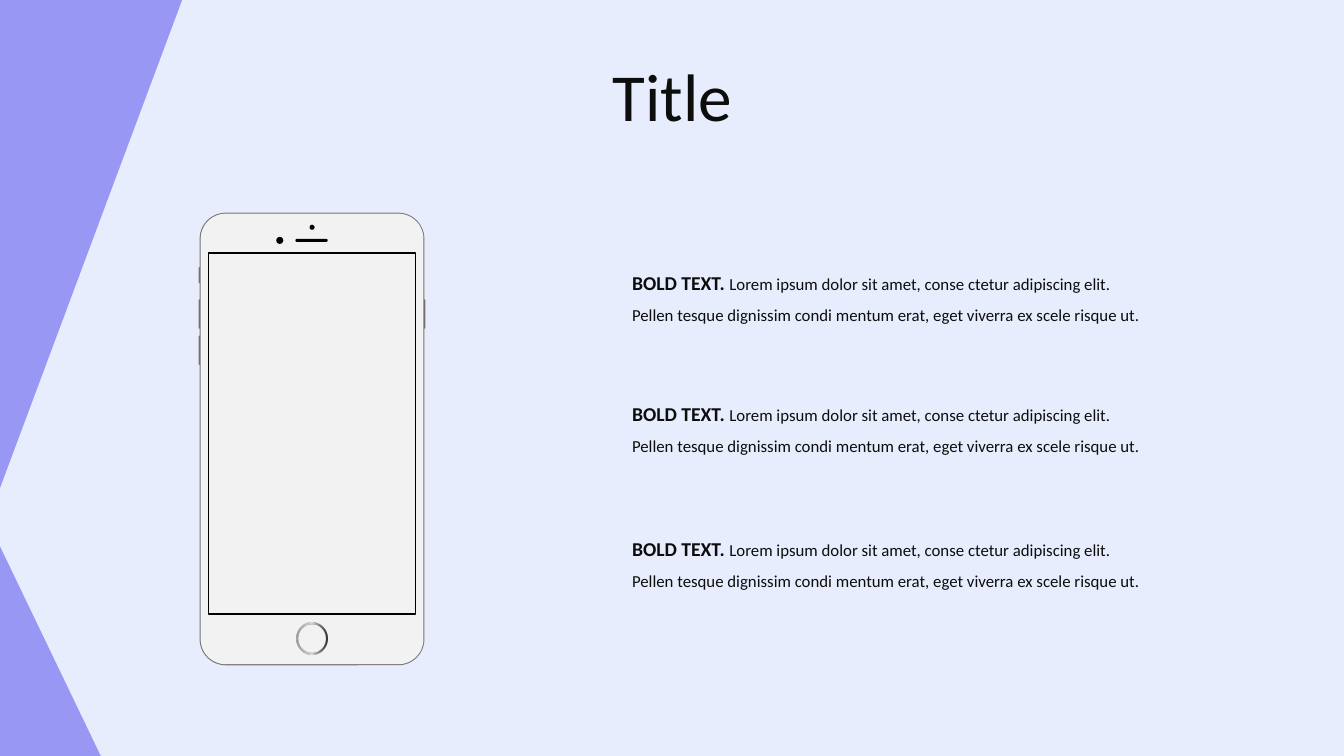
import dataclasses

import pptx
import pptx.dml.color
import pptx.enum.shapes
import pptx.enum.text
import pptx.oxml
import pptx.oxml.ns
import pptx.util

Inches = pptx.util.Inches
SHAPE = pptx.enum.shapes.MSO_SHAPE
TEXT = pptx.enum.text


@dataclasses.dataclass(frozen=True)
class Theme:
    background: str = "E7EDFD"
    accent: str = "9898F4"
    phone_edge: str = "767171"
    phone_face: str = "F2F2F2"
    black: str = "000000"
    ink: str = "0D0D0D"
    ring: tuple = ((0, "979797", 100), (50, "D7D7D7", 100), (100, "000000", 80))
    font: str = "Calibri"
    title_size: int = 48
    lead_size: int = 14
    body_size: int = 12


def rgb(value):
    return pptx.dml.color.RGBColor.from_string(value)


def apply(target, values):
    for name, value in values.items():
        setattr(target, name, value)


class SlideBuilder:
    def __init__(self, slide, theme):
        self.slide = slide
        self.theme = theme
        slide.background.fill.solid()
        slide.background.fill.fore_color.rgb = rgb(theme.background)

    def shape(self, kind, box, fill=None, line=None, radius=None, parent=None):
        shapes = (parent or self.slide).shapes
        item = shapes.add_shape(kind, *map(Inches, box))
        item.shadow.inherit = False
        if fill:
            item.fill.solid()
            item.fill.fore_color.rgb = rgb(fill)
        else:
            item.fill.background()
        if line:
            item.line.color.rgb = rgb(line)
            item.line.width = pptx.util.Pt(1)
        else:
            item.line.fill.background()
        if radius is not None:
            item.adjustments[0] = radius / min(box[2:])
        return item

    def gradient(self, item, stops):
        item.fill.gradient()
        item.fill.gradient_angle = 0
        qn = pptx.oxml.ns.qn
        stop_list = item._element.spPr.find(qn("a:gradFill")).find(qn("a:gsLst"))
        for stop in list(stop_list):
            stop_list.remove(stop)
        for position, colour, alpha in stops:
            stop_list.append(pptx.oxml.parse_xml(
                f'<a:gs {pptx.oxml.ns.nsdecls("a")} pos="{position * 1000}">'
                f'<a:srgbClr val="{colour}"><a:alpha val="{alpha * 1000}"/>'
                '</a:srgbClr></a:gs>'))

    def fill_text(self, holder, box, runs, spacing, align):
        apply(holder, dict(zip(("left", "top", "width", "height"), map(Inches, box))))
        apply(holder.text_frame, {
            "word_wrap": True,
            "vertical_anchor": TEXT.MSO_ANCHOR.TOP,
            "auto_size": TEXT.MSO_AUTO_SIZE.SHAPE_TO_FIT_TEXT,
        })
        paragraph = holder.text_frame.paragraphs[0]
        apply(paragraph, {"line_spacing": spacing, "alignment": align})
        for text, size, bold in runs:
            run = paragraph.add_run()
            run.text = text
            apply(run.font, {"name": self.theme.font, "size": pptx.util.Pt(size), "bold": bold})
            run.font.color.rgb = rgb(self.theme.ink)

    def title(self, text, box):
        self.fill_text(self.slide.shapes.title, box, [(text, self.theme.title_size, False)],
                       1.0, TEXT.PP_ALIGN.CENTER)

    def text(self, lead, body, box):
        runs = [(lead, self.theme.lead_size, True), (body, self.theme.body_size, False)]
        self.fill_text(self.slide.shapes.add_textbox(0, 0, 0, 0), box, runs,
                       1.5, TEXT.PP_ALIGN.LEFT)

    def corners(self):
        self.shape(SHAPE.RIGHT_TRIANGLE, (0, 5.42, 1, 2.08), self.theme.accent)
        upper = self.shape(SHAPE.RIGHT_TRIANGLE, (0, -0.01, 1.81, 4.85), self.theme.accent)
        upper.rotation = 180
        upper._element.spPr.xfrm.set("flipH", "1")

    def phone(self):
        theme = self.theme
        phone = self.slide.shapes.add_group_shape()
        side_buttons = [(1.97, 2.65, 0.16), (1.97, 2.97, 0.29),
                        (1.97, 3.33, 0.29), (4.19, 2.97, 0.29)]
        for left, top, height in side_buttons:
            self.shape(SHAPE.ROUNDED_RECTANGLE, (left, top, 0.03, height),
                       theme.phone_edge, radius=0.01, parent=phone)
        body_parts = [
            (SHAPE.ROUNDED_RECTANGLE, (1.98, 2.11, 2.23, 4.49), theme.phone_edge, 0.26),
            (SHAPE.ROUNDED_RECTANGLE, (1.99, 2.12, 2.21, 4.47), theme.phone_face, 0.25),
            (SHAPE.OVAL, (2.74, 2.35, 0.07, 0.07), theme.black, None),
            (SHAPE.OVAL, (3.07, 2.23, 0.05, 0.05), theme.black, None),
            (SHAPE.ROUNDED_RECTANGLE, (2.93, 2.37, 0.32, 0.03), theme.black, 0.015),
        ]
        for kind, box, fill, radius in body_parts:
            self.shape(kind, box, fill, radius=radius, parent=phone)
        home = self.shape(SHAPE.DONUT, (2.94, 6.18, 0.31, 0.31), radius=0.02, parent=phone)
        self.gradient(home, theme.ring)
        self.shape(SHAPE.RECTANGLE, (2.07, 2.51, 2.05, 3.58), line=theme.black)


def main():
    deck = pptx.Presentation()
    apply(deck, {"slide_width": Inches(13.33), "slide_height": Inches(7.5)})
    builder = SlideBuilder(deck.slides.add_slide(deck.slide_layouts[5]), Theme())
    builder.corners()
    builder.phone()
    builder.title("Title", (3.06, 0.49, 7.22, 0.91))
    for top in (2.52, 3.82, 5.16):
        builder.text(
            "BOLD TEXT. ",
            "Lorem ipsum dolor sit amet, conse ctetur adipiscing elit. "
            "Pellen tesque dignissim condi mentum erat, eget viverra ex scele risque ut.",
            (6.17, top, 5.38, 0.73))
    deck.save("out.pptx")


if __name__ == "__main__":
    main()
